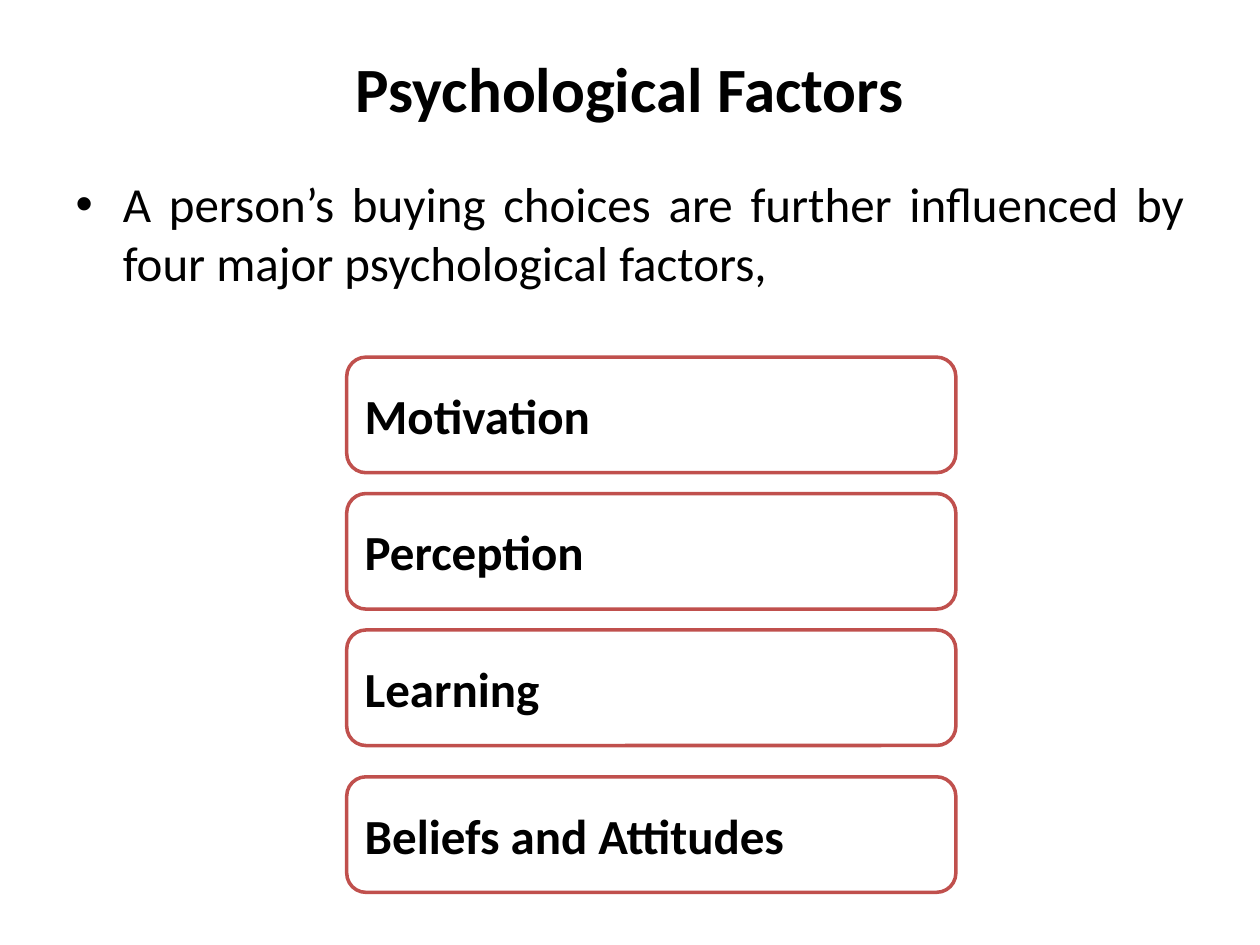
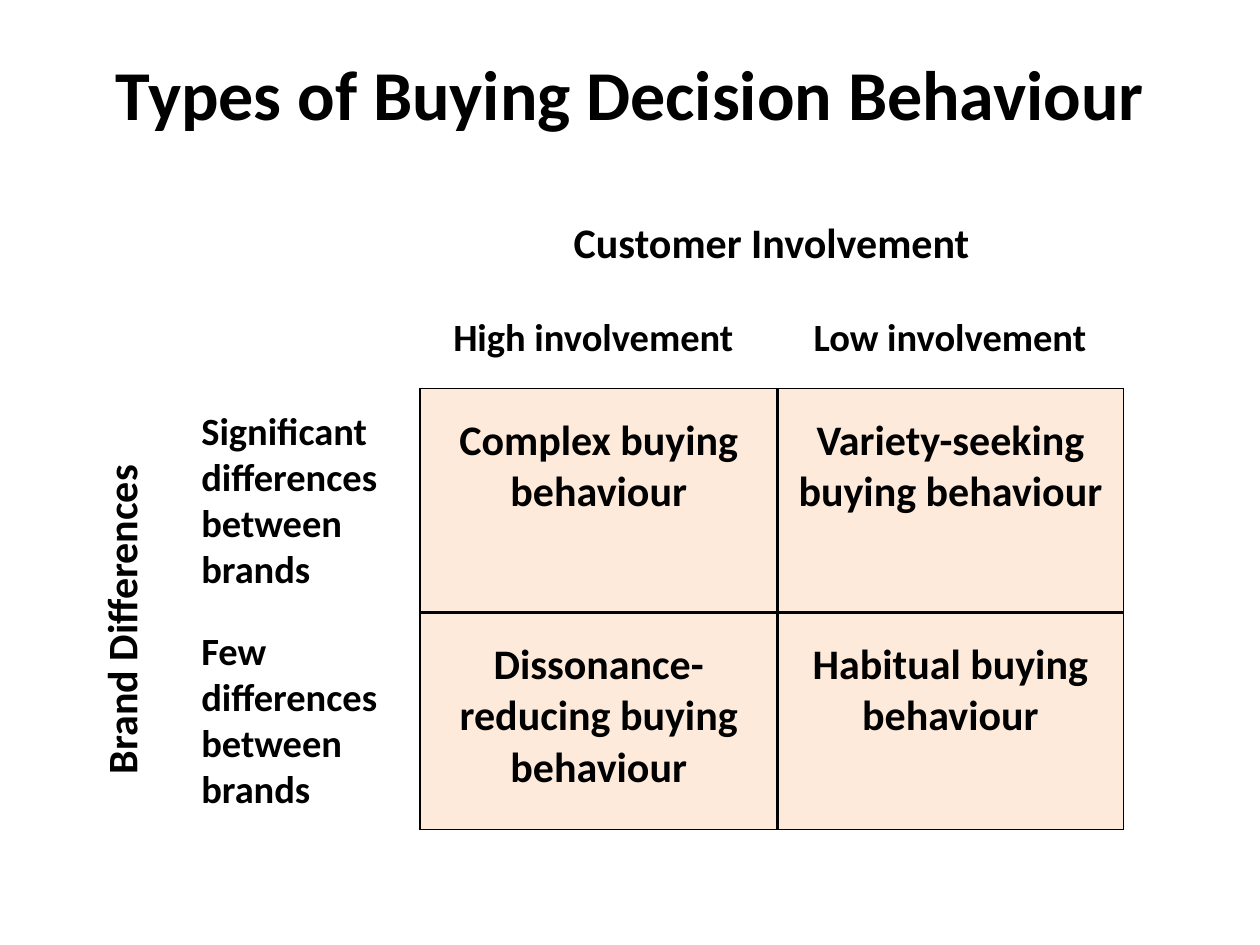
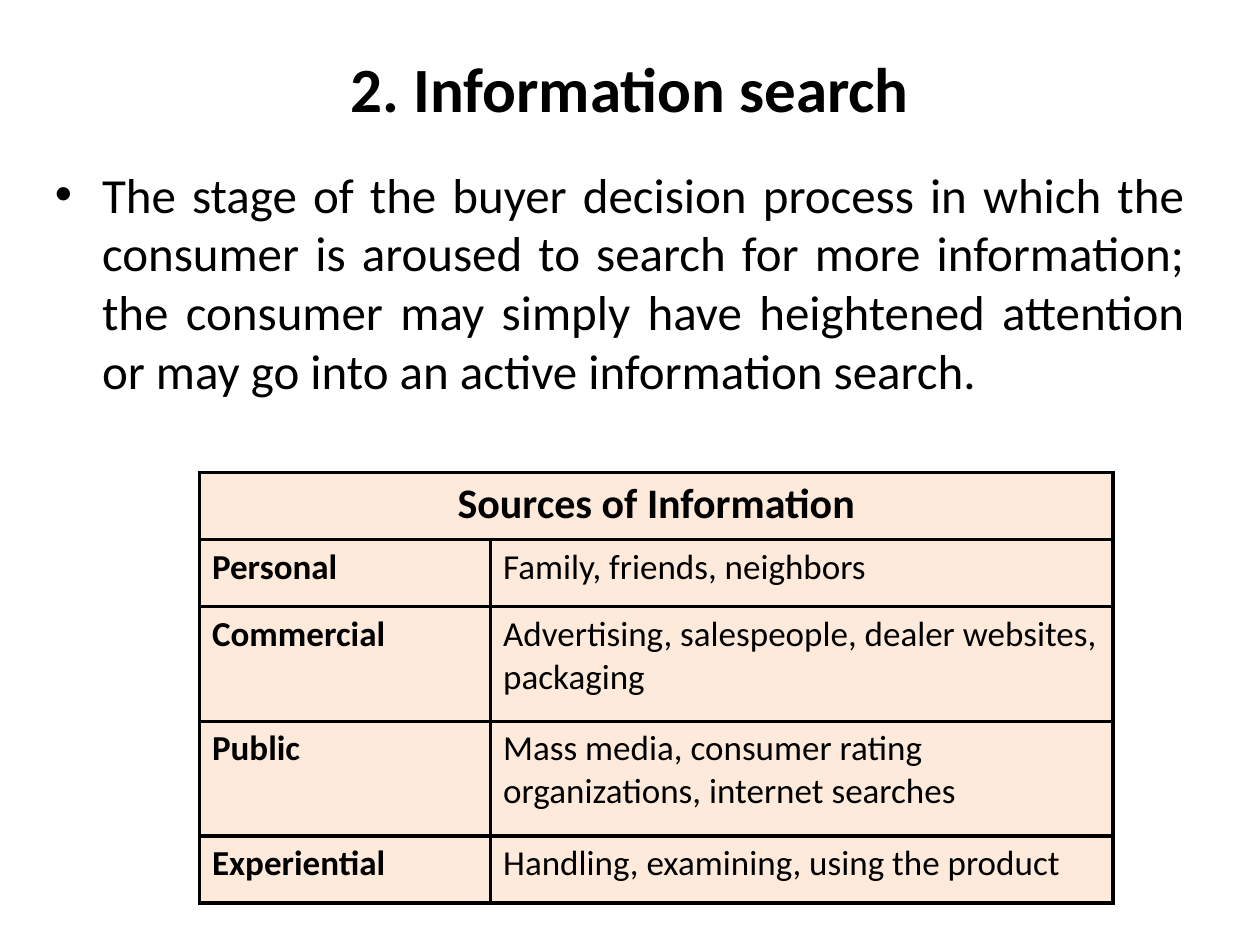
import pptx
import pptx.dml.color
import pptx.enum.shapes
import pptx.enum.text
import pptx.oxml
import pptx.oxml.ns
import pptx.util

Cm = pptx.util.Cm
Pt = pptx.util.Pt
ALIGN = pptx.enum.text.PP_ALIGN
MIDDLE = pptx.enum.text.MSO_ANCHOR.MIDDLE
ROUND = pptx.enum.shapes.MSO_SHAPE.ROUNDED_RECTANGLE

FONT = "Calibri"
COLORS = {"ink": "000000", "paper": "FFFFFF", "edge": "C0504D", "cell": "FDEADA"}
THICK = 2.25


def color(name):
    return pptx.dml.color.RGBColor.from_string(COLORS[name])


def write(frame, text, size, bold=True, align=ALIGN.CENTER):
    """Fill a text frame with one formatted paragraph."""
    frame.text = text
    frame.word_wrap = True
    para = frame.paragraphs[0]
    para.alignment = align
    for run in para.runs:
        run.font.name = FONT
        run.font.size = Pt(size)
        run.font.bold = bold
        run.font.color.rgb = color("ink")


def place(shape, *box):
    shape.left, shape.top, shape.width, shape.height = map(Cm, box)


# Placeholders
def add_page(deck, layout, title, size=36, height=1.98):
    slide = deck.slides.add_slide(deck.slide_layouts[layout])
    head = slide.shapes.title
    place(head, 1.27, 0.76, 22.86, height)
    write(head.text_frame, title, size)
    head.text_frame.vertical_anchor = MIDDLE
    head.text_frame.auto_size = pptx.enum.text.MSO_AUTO_SIZE.NONE
    return slide


def add_body(slide, text, *box):
    body = slide.placeholders[1]
    place(body, *box)
    frame = body.text_frame
    frame.text = text
    props = frame.paragraphs[0]._p.get_or_add_pPr()
    props.set("marL", str(Cm(0.95)))
    props.set("indent", "0")
    pptx.oxml.ns.qn("a:buNone")
    props.append(pptx.oxml.parse_xml(f"<a:buNone {pptx.oxml.ns.nsdecls('a')}/>"))
    write(frame, text, 28, False, ALIGN.JUSTIFY)
    frame.paragraphs[0].space_before = Pt(0)
    frame.auto_size = pptx.enum.text.MSO_AUTO_SIZE.NONE


# Boxes and labels
def add_card(slide, text, *box):
    card = slide.shapes.add_shape(ROUND, *map(Cm, box))
    card.shadow.inherit = False
    card.fill.solid()
    card.fill.fore_color.rgb = color("paper")
    card.line.color.rgb = color("edge")
    card.line.width = Pt(2)
    write(card.text_frame, text, 28, align=ALIGN.JUSTIFY)
    card.text_frame.vertical_anchor = MIDDLE


def add_label(slide, text, size, box, align=ALIGN.CENTER, turn=False):
    label = slide.shapes.add_textbox(*map(Cm, box))
    write(label.text_frame, text, size, align=align)
    label.text_frame.vertical_anchor = MIDDLE
    if turn:
        label.text_frame._txBody.bodyPr.set("vert", "vert270")


# Tables
def set_edges(cell, widths):
    """Draw cell borders; widths are left, right, top, bottom in points."""
    props = cell._tc.get_or_add_tcPr()
    for spot, (side, width) in enumerate(zip("LRTB", widths)):
        props.insert(spot, pptx.oxml.parse_xml(
            f'<a:ln{side} {pptx.oxml.ns.nsdecls("a")} w="{Pt(width)}">'
            f'<a:solidFill><a:srgbClr val="{COLORS["ink"]}"/></a:solidFill>'
            f'</a:ln{side}>'))


def add_grid(slide, left, top, cols, rows, rim):
    """Add a filled table with thick inner lines and a rim of its own width."""
    frame = slide.shapes.add_table(len(rows), len(cols), Cm(left), Cm(top),
                                   Cm(sum(cols)), Cm(sum(rows)))
    grid = frame.table
    grid.first_row = grid.horz_banding = False
    for col, width in zip(grid.columns, cols):
        col.width = Cm(width)
    for row, height in zip(grid.rows, rows):
        row.height = Cm(height)
    for r in range(len(rows)):
        for c in range(len(cols)):
            cell = grid.cell(r, c)
            cell.fill.solid()
            cell.fill.fore_color.rgb = color("cell")
            outer = (c == 0, c == len(cols) - 1, r == 0, r == len(rows) - 1)
            set_edges(cell, [rim if out else THICK for out in outer])
    return grid


# Slides
def add_factors(deck):
    slide = add_page(deck, 1, "Psychological Factors")
    add_body(slide, "A person’s buying choices are further influenced by four "
             "major psychological factors,", 1.27, 3.38, 22.86, 3.38)
    cards = {"Motivation": 7.2, "Perception": 9.95, "Learning": 12.7,
             "Beliefs and Attitudes": 15.66}
    for text, top in cards.items():
        add_card(slide, text, 6.99, top, 12.28, 2.33)


def add_types(deck):
    slide = add_page(deck, 5, "Types of Buying Decision Behaviour", 40, 2.21)
    kinds = [["Complex buying behaviour", "Variety-seeking buying behaviour"],
             ["Dissonance-reducing buying behaviour", "Habitual buying behaviour"]]
    grid = add_grid(slide, 8.47, 7.83, [7.2, 6.98], [4.52, 4.37], 1)
    for r, row in enumerate(kinds):
        for c, text in enumerate(row):
            cell = grid.cell(r, c)
            cell.margin_top = Cm(0.55)
            write(cell.text_frame, text, 24)

    # Column and row labels
    add_label(slide, "High involvement", 22, (8.68, 5.93, 6.56, 1.69))
    add_label(slide, "Low involvement", 22, (15.66, 5.93, 6.98, 1.69))
    sides = {"Significant differences between brands": 8.26,
             "Few differences between brands": 12.7}
    for text, top in sides.items():
        add_label(slide, text, 22, (3.81, top, 4.23, 3.6), ALIGN.JUSTIFY)

    # Axis names
    add_label(slide, "Customer Involvement", 24, (10.37, 4.02, 10.37, 1.69))
    add_label(slide, "Brand Differences", 24, (1.48, 8.68, 1.9, 7.62), turn=True)


def add_search(deck):
    slide = add_page(deck, 1, "2. Information search")
    add_body(slide, "The stage of the buyer decision process in which the consumer "
             "is aroused to search for more information; the consumer may simply "
             "have heightened attention or may go into an active information "
             "search.", 0.85, 3.18, 23.28, 5.72)
    sources = {
        "Personal": "Family, friends, neighbors",
        "Commercial": "Advertising, salespeople, dealer websites, packaging",
        "Public": "Mass media, consumer rating organizations, internet searches",
        "Experiential": "Handling, examining, using the product",
    }
    grid = add_grid(slide, 4.02, 9.53, [5.87, 12.55],
                    [1.35, 1.35, 2.31, 2.31, 1.35], THICK)
    grid.cell(0, 0).merge(grid.cell(0, 1))
    write(grid.cell(0, 0).text_frame, "Sources of Information", 24)
    for r, (source, items) in enumerate(sources.items(), 1):
        write(grid.cell(r, 0).text_frame, source, 20, align=ALIGN.JUSTIFY)
        write(grid.cell(r, 1).text_frame, items, 20, False, ALIGN.LEFT)


def main():
    deck = pptx.Presentation()
    deck.slide_width, deck.slide_height = Cm(25.4), Cm(19.05)
    add_factors(deck)
    add_types(deck)
    add_search(deck)
    deck.save("out.pptx")


if __name__ == "__main__":
    main()
